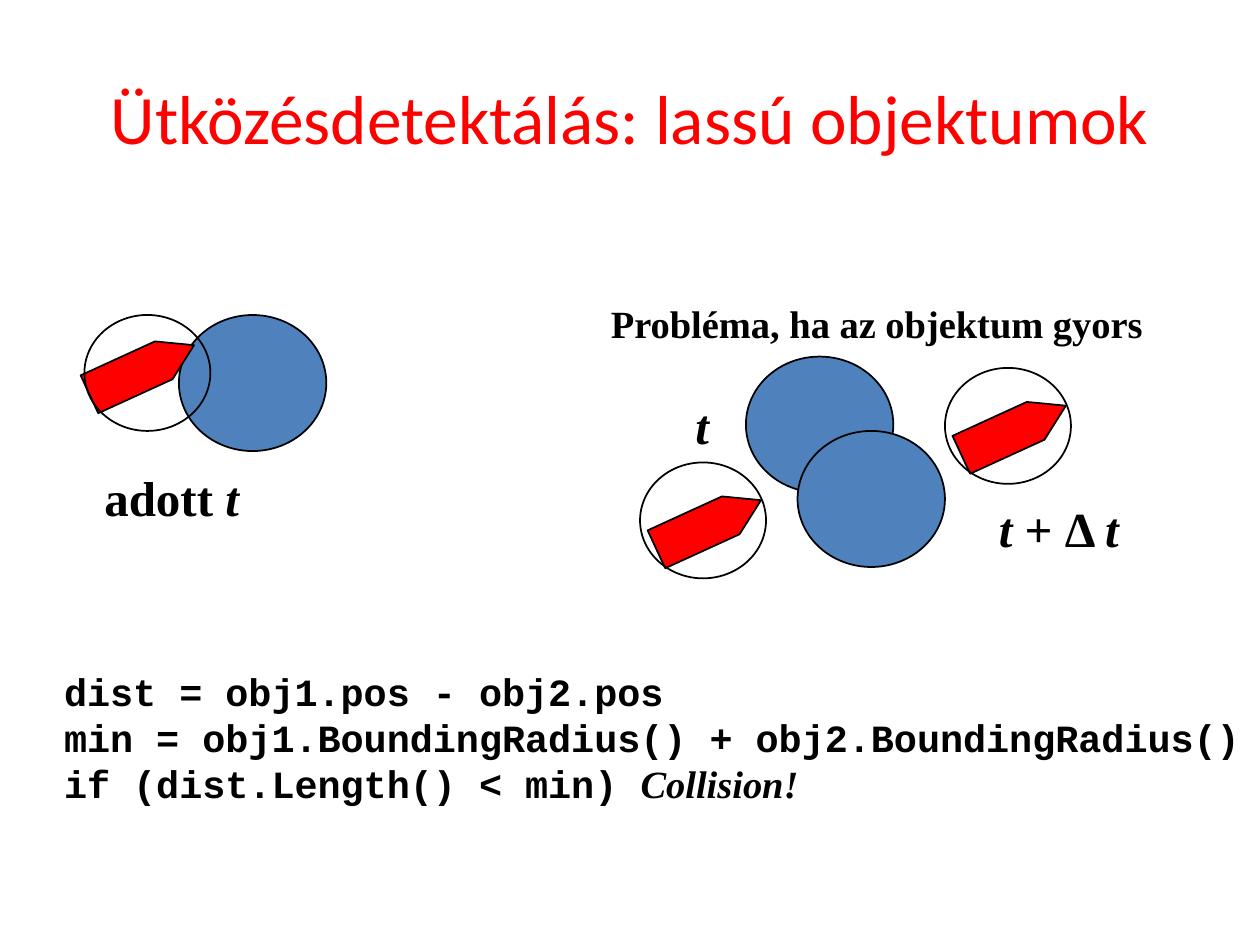
from pptx import Presentation
from pptx.dml.color import RGBColor
from pptx.enum.shapes import MSO_SHAPE
from pptx.enum.text import MSO_ANCHOR, MSO_AUTO_SIZE, PP_ALIGN
from pptx.util import Inches, Pt

BLACK = RGBColor(0x00, 0x00, 0x00)
RED = RGBColor(0xFF, 0x00, 0x00)
BLUE = RGBColor(0x4F, 0x81, 0xBD)
SERIF = "Times New Roman"
MONO = "Courier New"

# Ship outline, measured from its lower tail corner
SHIP = [(-0.14, -0.3), (0.45, -0.57), (0.76, -0.54), (0.59, -0.27)]


def style(shape, color=None):
    shape.shadow.inherit = False
    if color is None:
        shape.fill.background()
    else:
        shape.fill.solid()
        shape.fill.fore_color.rgb = color
    shape.line.color.rgb = BLACK
    shape.line.width = Pt(1)


def write(box, size, lines):
    """Fill a text box; each line is a list of (text, font, italic)."""
    frame = box.text_frame
    frame.word_wrap = False
    frame.auto_size = MSO_AUTO_SIZE.SHAPE_TO_FIT_TEXT
    for i, line in enumerate(lines):
        para = frame.paragraphs[0] if i == 0 else frame.add_paragraph()
        para.font.size = Pt(size)
        para.font.bold = True
        para.font.color.rgb = BLACK
        for text, font, italic in line:
            run = para.add_run()
            run.text = text
            run.font.name = font
            run.font.italic = italic


deck = Presentation()
deck.slide_width, deck.slide_height = Inches(10), Inches(7.5)
slide = deck.slides.add_slide(deck.slide_layouts[5])
shapes = slide.shapes

# Title
title = shapes.title
title.left, title.top = Inches(0.5), Inches(0.3)
title.width, title.height = Inches(9), Inches(1.25)
title.text_frame.text = "Ütközésdetektálás: lassú objektumok"
title.text_frame.vertical_anchor = MSO_ANCHOR.MIDDLE
head = title.text_frame.paragraphs[0]
head.alignment = PP_ALIGN.CENTER
head.font.name = "Calibri"
head.font.size = Pt(39.6)
head.font.color.rgb = RED

# Objects from back to front: balls, ships and their bounding circles
parts = [
    ("ball", 1.42, 2.5), ("ship", 0.78, 3.28), ("ring", 0.67, 2.5),
    ("ball", 5.92, 2.83), ("ship", 5.28, 4.51), ("ring", 5.08, 3.67),
    ("ship", 7.7, 3.76), ("ring", 7.5, 2.92), ("ball", 6.33, 3.42),
]
for kind, x, y in parts:
    if kind == "ship":
        path = shapes.build_freeform(Inches(x), Inches(y))
        path.add_line_segments(
            [(Inches(x + dx), Inches(y + dy)) for dx, dy in SHIP], close=True)
        style(path.convert_to_shape(), RED)
    else:
        wide, high, color = (1.17, 1.08, BLUE) if kind == "ball" else (1, 0.92, None)
        oval = shapes.add_shape(
            MSO_SHAPE.OVAL, Inches(x), Inches(y), Inches(wide), Inches(high))
        style(oval, color)

# Labels and pseudocode
texts = [
    (0.41, 5.25, 9.68, 1.21, 22, [
        [("dist = obj1.pos - obj2.pos", MONO, False)],
        [("min = obj1.BoundingRadius() + obj2.BoundingRadius()", MONO, False)],
        [("if (dist.Length() < min) ", MONO, False), ("Collision!", SERIF, True)]]),
    (0.73, 3.66, 1.27, 0.57, 28, [[("adott ", SERIF, False), ("t", SERIF, True)]]),
    (4.75, 2.33, 4.44, 0.47, 22, [[("Probléma, ha az objektum gyors", SERIF, False)]]),
    (5.42, 3.09, 0.31, 0.57, 28, [[("t", SERIF, True)]]),
    (7.83, 3.91, 1.17, 0.57, 28, [
        [("t", SERIF, True), (" + Δ ", SERIF, False), ("t", SERIF, True)]]),
]
for x, y, wide, high, size, lines in texts:
    box = shapes.add_textbox(Inches(x), Inches(y), Inches(wide), Inches(high))
    write(box, size, lines)

deck.save("out.pptx")
